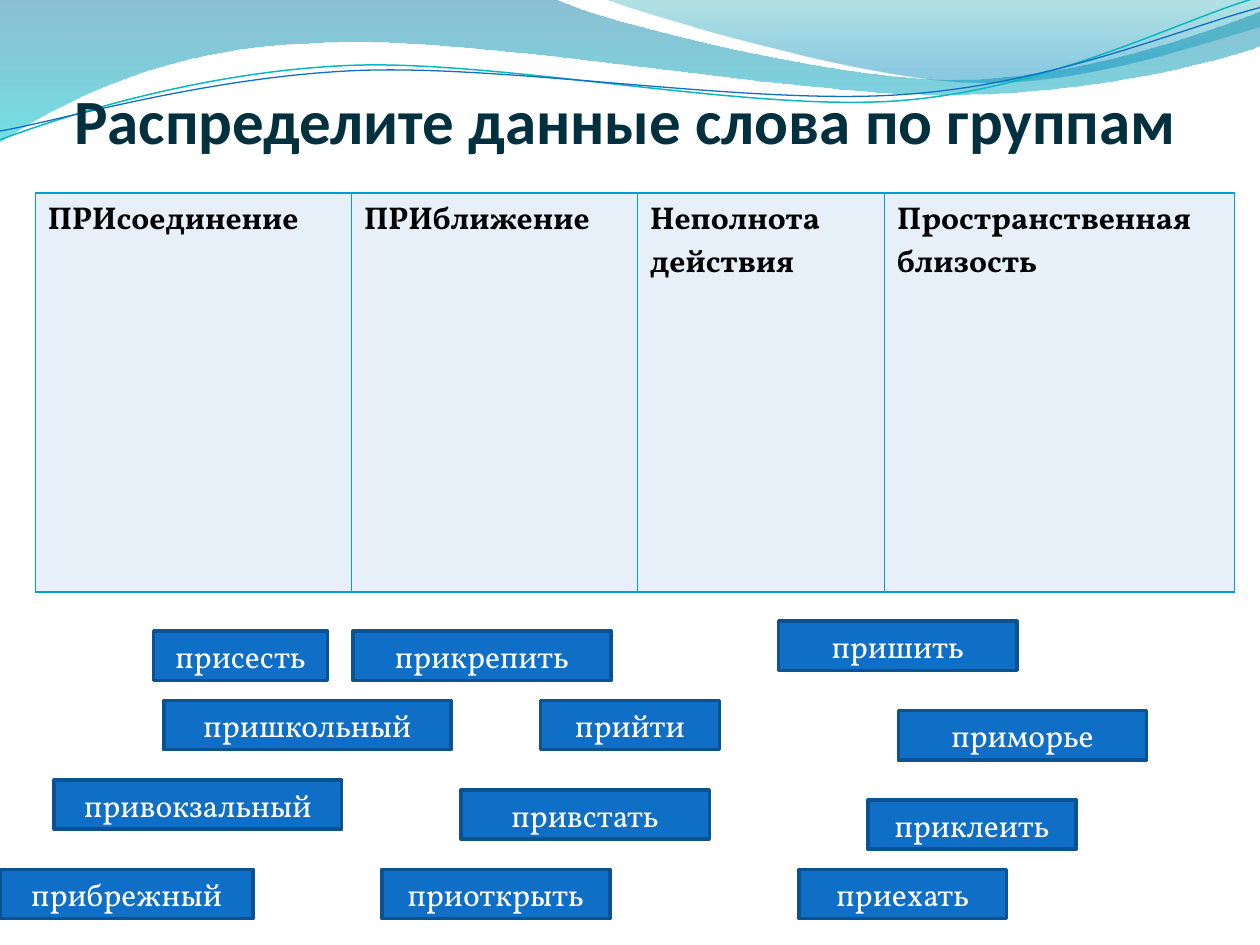
from math import cos, radians, sin

from pptx import Presentation
from pptx.dml.color import RGBColor
from pptx.enum.shapes import MSO_SHAPE
from pptx.enum.text import MSO_ANCHOR, PP_ALIGN
from pptx.oxml import parse_xml
from pptx.oxml.ns import nsdecls, qn
from pptx.util import Inches, Pt

SERIF = "Vollkorn"
BLUE = "0F6FC6"
TILT = 357.3

# Outlines: a start point, then lines (x, y) or cubic curves (six numbers)
BAND = [(0, 0), (4.4, -0.01), (4.76, 0.17, 6.64, 0.63, 7.58, 0.63),
        (8.53, 0.63, 9.58, 0.26, 10, 0.09), (10.01, 0.36),
        (9.83, 0.44, 8.7, 0.76, 7.46, 0.75),
        (6.22, 0.75, 3.82, 0.28, 2.57, 0.34),
        (1.29, 0.36, 0.46, 0.83, -0.01, 1.13), (0, 0)]
CREST = [(4.79, -0.01), (5.09, 0.11, 6.82, 0.62, 7.69, 0.65),
         (8.56, 0.69, 9.61, 0.32, 10, 0.21), (10, 0), (4.79, -0.01)]
TEAL_LINE = [(0, 1.11), (0.48, 0.93, 1.58, 0.57, 2.77, 0.52),
             (3.95, 0.47, 5.93, 0.89, 7.13, 0.8),
             (8.33, 0.71, 9.38, 0.15, 9.98, -0.02)]
BLUE_LINE = [(0, 1.04), (0.47, 0.96, 1.64, 0.61, 2.83, 0.56),
             (4.03, 0.51, 5.97, 0.84, 7.17, 0.75),
             (8.36, 0.67, 9.41, 0.21, 10, 0.06)]

GROUPS = [("ПРИсоединение", 2.51), ("ПРИближение", 2.27),
          ("Неполнота действия", 1.96), ("Пространственная близость", 2.78)]

# Word, left, top, width
WORDS = [("прикрепить", 2.8, 5.01, 2.05), ("приморье", 7.13, 5.64, 1.97),
         ("приклеить", 6.89, 6.35, 1.65), ("прийти", 4.29, 5.56, 1.42),
         ("пришить", 6.18, 4.93, 1.89), ("пришкольный", 1.3, 5.56, 2.28),
         ("привстать", 3.66, 6.27, 1.97), ("приехать", 6.34, 6.9, 1.65),
         ("приоткрыть", 3.03, 6.9, 1.81), ("прибрежный", 0, 6.9, 2.01),
         ("привокзальный", 0.43, 6.19, 2.28), ("присесть", 1.22, 5.01, 1.38)]


def color(code):
    return RGBColor.from_string(code)


def add_run(para, text, font, size, code, bold=False):
    run = para.add_run()
    run.text = text
    run.font.name = font
    run.font.size = Pt(size)
    run.font.bold = bold
    run.font.color.rgb = color(code)


def localize(point, frame, turn):
    """Undo the turn about the frame's middle and measure from its corner."""
    left, top, width, height = frame
    x, y = point[0] - left - width / 2, point[1] - top - height / 2
    angle = radians(-turn)
    return (Inches(x * cos(angle) - y * sin(angle) + width / 2),
            Inches(x * sin(angle) + y * cos(angle) + height / 2))


def add_outline(slide, outline, frame, turn=0):
    """Build a freeform and bend its segments into cubic curves."""
    parts = [[localize(part[i:i + 2], frame, turn) for i in range(0, len(part), 2)]
             for part in outline]
    pen = slide.shapes.build_freeform(*parts[0][0])
    pen.add_line_segments([part[-1] for part in parts[1:]],
                          close=outline[0] == outline[-1])
    shape = pen.convert_to_shape()
    shape.left, shape.top, shape.width, shape.height = map(Inches, frame)
    shape.rotation = turn
    shape.shadow.inherit = False
    track = next(shape._element.iter(qn("a:path")))
    track.set("w", str(shape.width))
    track.set("h", str(shape.height))
    for node, part in zip(list(track), parts):
        if len(part) == 3:
            node.tag = qn("a:cubicBezTo")
        for spot in list(node):
            node.remove(spot)
        for x, y in part:
            node.append(parse_xml(f'<a:pt {nsdecls("a")} x="{x}" y="{y}"/>'))
    return shape


def add_wave(slide, outline, frame, stops):
    """Draw a filled wave; stops are (place, colour, opacity in percent)."""
    shape = add_outline(slide, outline, frame)
    shape.line.fill.background()
    shape.fill.gradient()
    shape.fill.gradient_angle = 270
    for stop, (place, code, _) in zip(shape.fill.gradient_stops, stops):
        stop.position = place
        stop.color.rgb = color(code)
    tints = shape._element.spPr.iter(qn("a:srgbClr"))
    for tint, (_, _, alpha) in zip(list(tints), stops):
        tint.append(parse_xml(f'<a:alpha {nsdecls("a")} val="{alpha * 1000}"/>'))


def add_curve(slide, outline, frame, code, width):
    shape = add_outline(slide, outline, frame, TILT)
    shape.fill.background()
    shape.line.color.rgb = color(code)
    shape.line.width = Pt(width)


def add_title(slide, text):
    box = slide.shapes.add_textbox(Inches(0.59), Inches(0), Inches(8.75), Inches(1.25))
    frame = box.text_frame
    frame.word_wrap = True
    frame.vertical_anchor = MSO_ANCHOR.BOTTOM
    frame.margin_left = frame.margin_right = frame.margin_bottom = 0
    add_run(frame.paragraphs[0], text, "Calibri", 36, "02303E", True)


def add_border(cell, code, width):
    props = cell._tc.get_or_add_tcPr()
    for place, side in enumerate("LRTB"):
        props.insert(place, parse_xml(
            f'<a:ln{side} {nsdecls("a")} w="{Pt(width)}"><a:solidFill>'
            f'<a:srgbClr val="{code}"/></a:solidFill></a:ln{side}>'))


def add_groups(slide):
    total = sum(width for _, width in GROUPS)
    table = slide.shapes.add_table(1, len(GROUPS), Inches(0.28), Inches(1.53),
                                   Inches(total), Inches(3.17)).table
    for place, (name, width) in enumerate(GROUPS):
        table.columns[place].width = Inches(width)
        cell = table.cell(0, place)
        cell.fill.solid()
        cell.fill.fore_color.rgb = color("E7EFF8")
        add_border(cell, "009DD9", 1)
        add_run(cell.text_frame.paragraphs[0], name, SERIF, 18, "000000", True)


def add_word(slide, text, left, top, width):
    card = slide.shapes.add_shape(MSO_SHAPE.RECTANGLE, Inches(left), Inches(top),
                                  Inches(width), Inches(0.39))
    card.shadow.inherit = False
    card.fill.solid()
    card.fill.fore_color.rgb = color(BLUE)
    card.line.color.rgb = color("0B5292")
    card.line.width = Pt(2)
    frame = card.text_frame
    frame.word_wrap = True
    frame.vertical_anchor = MSO_ANCHOR.MIDDLE
    para = frame.paragraphs[0]
    para.alignment = PP_ALIGN.CENTER
    add_run(para, text, SERIF, 18, "FFFFFF")


def main():
    deck = Presentation()
    deck.slide_width, deck.slide_height = Inches(10), Inches(7.5)
    slide = deck.slides.add_slide(deck.slide_layouts[6])
    add_wave(slide, BAND, (-0.01, -0.01, 10.02, 1.14),
             [(0, "0074A1", 45), (1, "00C6CF", 55)])
    add_wave(slide, CREST, (4.79, -0.01, 5.21, 0.7),
             [(0, "00A1A9", 30), (0.8, "008BBF", 45)])
    add_curve(slide, TEAL_LINE, (-0.02, 0.22, 10.02, 0.71), "0AB8BF", 0.85)
    add_curve(slide, BLUE_LINE, (-0.02, 0.3, 10.03, 0.58), BLUE, 0.75)
    add_title(slide, "Распределите данные слова по группам")
    add_groups(slide)
    for word in WORDS:
        add_word(slide, *word)
    deck.save("out.pptx")


if __name__ == "__main__":
    main()
